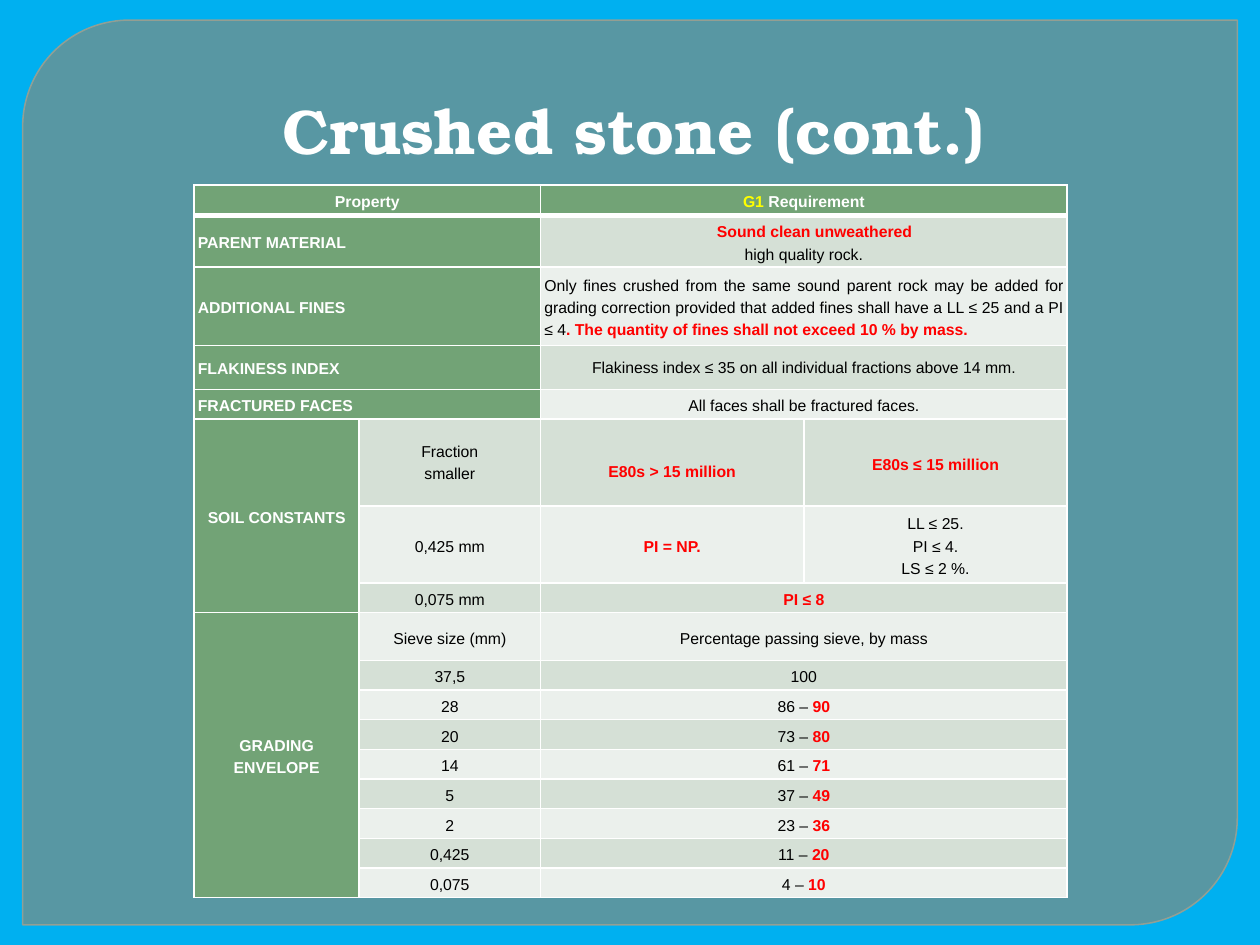
from lxml.etree import SubElement
from pptx import Presentation
from pptx.dml.color import RGBColor
from pptx.enum.shapes import MSO_SHAPE
from pptx.enum.text import MSO_ANCHOR, PP_ALIGN
from pptx.oxml.ns import qn
from pptx.util import Inches, Pt

HUE = {"back": "00B0F0", "panel": "888B7B", "edge": "9DA090", "white": "FFFFFF",
       "green": "72A376", "odd": "D5E0D6", "even": "EBF0EC",
       "red": "FF0000", "gold": "FFFF00", "black": "000000"}


def paint(fill, hue, alpha=None):
    fill.solid()
    fill.fore_color.rgb = RGBColor.from_string(HUE[hue])
    if alpha:
        tint = fill._xPr.find(qn("a:solidFill"))[0]
        SubElement(tint, qn("a:alpha")).set("val", str(alpha * 1000))


def style(font, hue, **form):
    for key, val in form.items():
        setattr(font, key, val)
    font.color.rgb = RGBColor.from_string(HUE[hue])


deck = Presentation()
deck.slide_width, deck.slide_height = Inches(10), Inches(7.5)
slide = deck.slides.add_slide(deck.slide_layouts[5])
paint(slide.background.fill, "back")

panel = slide.shapes.add_shape(MSO_SHAPE.ROUND_2_DIAG_RECTANGLE, Inches(0.18),
                               Inches(0.16), Inches(9.64), Inches(7.18))
panel.adjustments[0] = 0.118
panel.adjustments[1] = 0
panel.shadow.inherit = False
paint(panel.fill, "panel", 65)
paint(panel.line.fill, "edge", 88)
panel.line.width = Pt(0.87)
slide.shapes._spTree.insert(2, panel._element)

title = slide.shapes.title
place = {"left": 0, "top": 0, "width": Inches(10), "height": Inches(1.38)}
for key, val in place.items():
    setattr(title, key, val)
title.text_frame.text = "Crushed stone (cont.)"
title.text_frame.vertical_anchor = MSO_ANCHOR.BOTTOM
line = title.text_frame.paragraphs[0]
line.alignment = PP_ALIGN.CENTER
line._p.get_or_add_pPr().set("marL", str(Inches(0.06)))
style(line.runs[0].font, "white", name="TeX Gyre Bonum", size=Pt(36), bold=True)

rows = [
    ("Property", "", "|G1| Requirement", ""),
    ("PARENT MATERIAL", "", "|Sound clean unweathered\nhigh quality rock.", ""),
    ("ADDITIONAL FINES", "", "Only fines crushed from the same sound parent rock may be "
     "added for grading correction provided that added fines shall have a LL ≤ 25 and "
     "a PI ≤ 4|. The quantity of fines shall not exceed 10 % by mass.", ""),
    ("FLAKINESS INDEX", "",
     "Flakiness index ≤ 35 on all individual fractions above 14 mm.", ""),
    ("FRACTURED FACES", "", "All faces shall be fractured faces.", ""),
    ("SOIL CONSTANTS", "Fraction\nsmaller", "|E80s > 15 million", "|E80s ≤ 15 million"),
    ("", "0,425 mm", "|PI = NP.", "LL ≤ 25.\nPI ≤ 4.\nLS ≤ 2 %."),
    ("", "0,075 mm", "|PI ≤ 8", ""),
    ("GRADING ENVELOPE", "Sieve size (mm)", "Percentage passing sieve, by mass", ""),
    ("", "37,5", "100", ""),
    ("", "28", "86 – |90", ""),
    ("", "20", "73 – |80", ""),
    ("", "14", "61 – |71", ""),
    ("", "5", "37 – |49", ""),
    ("", "2", "23 – |36", ""),
    ("", "0,425", "11 – |20", ""),
    ("", "0,075", "4 – |10", ""),
]
wide = [1.31, 1.44, 2.09, 2.09]
tall = [0.24, 0.41, 0.62, 0.35, 0.23, 0.69, 0.61, 0.23, 0.38] + [0.23] * 8
grid = slide.shapes.add_table(len(rows), len(wide), Inches(1.54), Inches(1.47),
                              Inches(sum(wide)), Inches(sum(tall))).table
for col, size in zip(grid.columns, wide):
    col.width = Inches(size)
for row, size in zip(grid.rows, tall):
    row.height = Inches(size)

pad = {"margin_" + side: Inches(0.03) for side in ("left", "right", "top", "bottom")}
for r, row in enumerate(rows):
    for c, text in enumerate(row):
        cell = grid.cell(r, c)
        head = r == 0 or c == 0 or (c == 1 and r < 5)
        for key, val in pad.items():
            setattr(cell, key, val)
        cell.vertical_anchor = MSO_ANCHOR.MIDDLE
        props = cell._tc.get_or_add_tcPr()
        for side in "LRTB":
            thick = (r, side) in ((0, "B"), (1, "T"))
            edge = SubElement(props, qn("a:ln" + side), w=str(Pt(3 if thick else 1)))
            ink = SubElement(edge, qn("a:solidFill"))
            SubElement(ink, qn("a:srgbClr"), val=HUE["white"])
        paint(cell.fill, "green" if head else "odd" if r % 2 else "even")
        if not text:
            continue
        full = (r, c) == (2, 2) or (c == 0 and 0 < r < 5)
        frame = cell.text_frame
        for n, part in enumerate(text.split("\n")):
            line = frame.add_paragraph() if n else frame.paragraphs[0]
            line.alignment = PP_ALIGN.JUSTIFY if full else PP_ALIGN.CENTER
            line.line_spacing = 1.07 if (r, c, n) in ((3, 2, 0), (5, 1, 0)) else 1.25
            for k, words in enumerate(part.split("|")):
                if words:
                    run = line.add_run()
                    run.text = words
                    mark = "gold" if r == 0 else "red"
                    base = "white" if head else "black"
                    style(run.font, mark if k % 2 else base, name="Arial",
                          size=Pt(9), bold=head or k % 2 == 1)

grid.cell(1, 2).text_frame.paragraphs[0]._p.get_or_add_pPr().set("marL", str(Inches(0.17)))
grid.cell(5, 2).margin_top = Inches(0.14)
for r in range(len(rows)):
    if r < 5:
        grid.cell(r, 0).merge(grid.cell(r, 1))
    if r not in (5, 6):
        grid.cell(r, 2).merge(grid.cell(r, 3))
grid.cell(5, 0).merge(grid.cell(7, 0))
grid.cell(8, 0).merge(grid.cell(16, 0))

deck.save("out.pptx")
